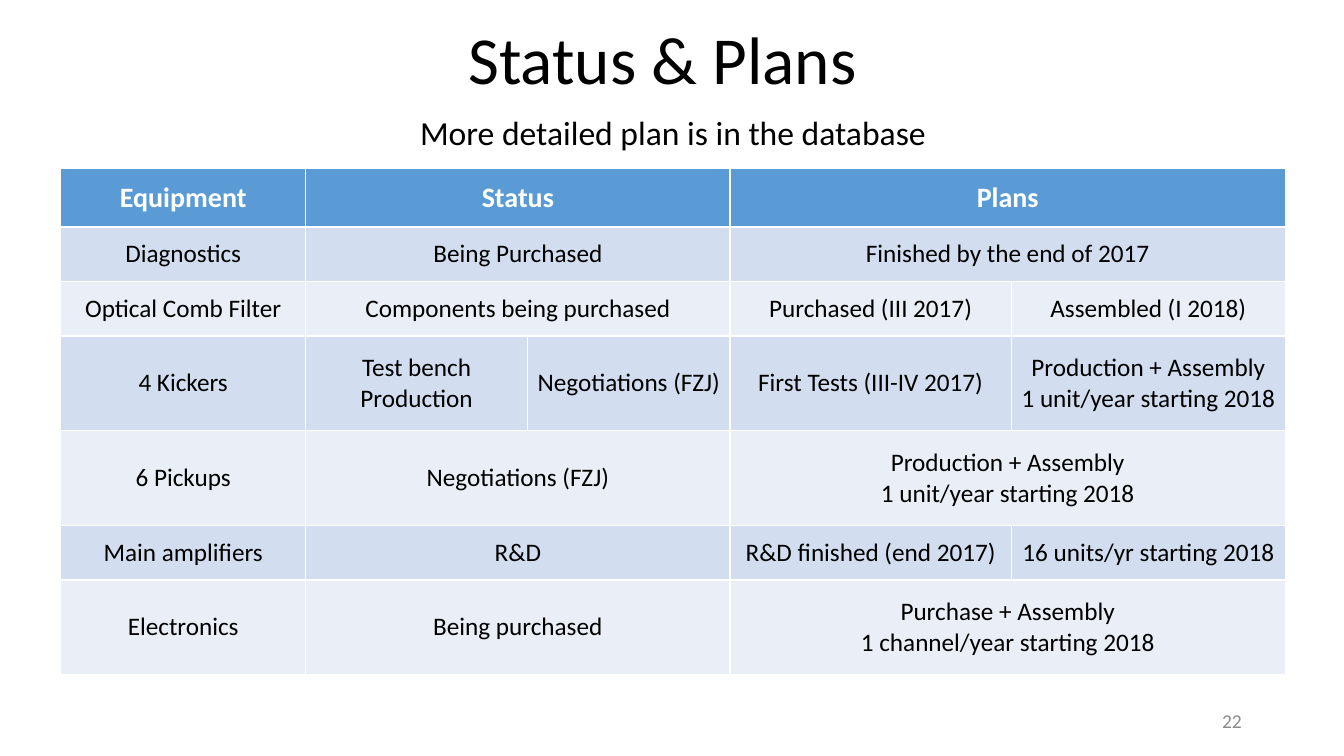
"""Build the Status & Plans slide with its equipment table."""
from pptx import Presentation
from pptx.dml.color import RGBColor
from pptx.enum.text import MSO_ANCHOR, PP_ALIGN
from pptx.util import Pt

CENTER, RIGHT = PP_ALIGN.CENTER, PP_ALIGN.RIGHT
MIDDLE = MSO_ANCHOR.MIDDLE
TITLE_ONLY = 5
FONT = "Calibri"
BLACK, WHITE, GRAY = "000000", "FFFFFF", "8C8C8C"
HEADER_FILL = "5B9BD5"
BAND_FILLS = ("EAEFF7", "D2DEEF")
COLUMN_WIDTHS = (175, 158.4, 144.7, 200.9, 195.8)
LINE_HEIGHTS = {1: 38.9, 2: 67.7}
HEADER_HEIGHT = 41.8

# None marks a cell merged into the one on its left.
PLAN_ROWS = (
    ("Equipment", "Status", None, "Plans", None),
    ("Diagnostics", "Being Purchased", None, "Finished by the end of 2017", None),
    ("Optical Comb Filter", "Components being purchased", None,
     "Purchased (III 2017)", "Assembled (I 2018)"),
    ("4 Kickers", "Test bench\nProduction", "Negotiations (FZJ)",
     "First Tests (III-IV 2017)", "Production + Assembly\n1 unit/year starting 2018 "),
    ("6 Pickups", "Negotiations (FZJ)", None,
     "Production + Assembly\n1 unit/year starting 2018", None),
    ("Main amplifiers", "R&D", None, "R&D finished (end 2017)", "16 units/yr starting 2018"),
    ("Electronics", "Being purchased", None,
     "Purchase + Assembly\n1 channel/year starting 2018", None),
)


def rgb(color):
    """Return the colour for a hex string."""
    return RGBColor.from_string(color)


def write(frame, text, size, color, align=CENTER, bold=False):
    """Fill a text frame, one paragraph for each line."""
    for index, line in enumerate(text.split("\n")):
        paragraph = frame.add_paragraph() if index else frame.paragraphs[0]
        paragraph.alignment = align
        run = paragraph.add_run()
        run.text = line
        run.font.name = FONT
        run.font.size = Pt(size)
        run.font.bold = bold
        run.font.color.rgb = rgb(color)


def place_title(slide, text):
    """Move the title placeholder and fill it."""
    title = slide.shapes.title
    title.left, title.top, title.width, title.height = Pt(326), Pt(8.6), Pt(294.5), Pt(65.5)
    title.text_frame.word_wrap = False
    title.text_frame.vertical_anchor = MSO_ANCHOR.TOP
    write(title.text_frame, text, 48, BLACK)


def add_label(slide, text, box, size, color, align, wrap=True):
    """Add a text box centred vertically in the given box."""
    frame = slide.shapes.add_textbox(*map(Pt, box)).text_frame
    frame.word_wrap = wrap
    frame.vertical_anchor = MIDDLE
    write(frame, text, size, color, align)


def add_plan_table(slide):
    """Add the equipment table with its merged cells."""
    heights = [HEADER_HEIGHT] + [
        LINE_HEIGHTS[max(len(text.split("\n")) for text in row if text)]
        for row in PLAN_ROWS[1:]
    ]
    table = slide.shapes.add_table(
        len(PLAN_ROWS), len(COLUMN_WIDTHS), Pt(43.4), Pt(120.4),
        Pt(sum(COLUMN_WIDTHS)), Pt(sum(heights))).table
    for column, width in zip(table.columns, COLUMN_WIDTHS):
        column.width = Pt(width)
    for row_index, texts in enumerate(PLAN_ROWS):
        table.rows[row_index].height = Pt(heights[row_index])
        is_header = row_index == 0
        for column_index, text in enumerate(texts):
            cell = table.cell(row_index, column_index)
            cell.fill.solid()
            cell.fill.fore_color.rgb = rgb(HEADER_FILL if is_header else BAND_FILLS[row_index % 2])
            cell.vertical_anchor = MIDDLE
            if text is None:
                table.cell(row_index, column_index - 1).merge(cell)
            elif is_header:
                write(cell.text_frame, text, 20, WHITE, bold=True)
            else:
                write(cell.text_frame, text, 18, BLACK)


def main():
    """Build and save the slide."""
    presentation = Presentation()
    presentation.slide_width, presentation.slide_height = Pt(960), Pt(540)
    slide = presentation.slides.add_slide(presentation.slide_layouts[TITLE_ONLY])
    place_title(slide, "Status & Plans")
    add_label(slide, "More detailed plan is in the database",
              (291, 76.3, 379.4, 36), 24, BLACK, CENTER, wrap=False)
    add_plan_table(slide)
    add_label(slide, "22", (678.2, 500.5, 216, 28.8), 14, GRAY, RIGHT)
    presentation.save("out.pptx")


if __name__ == "__main__":
    main()
